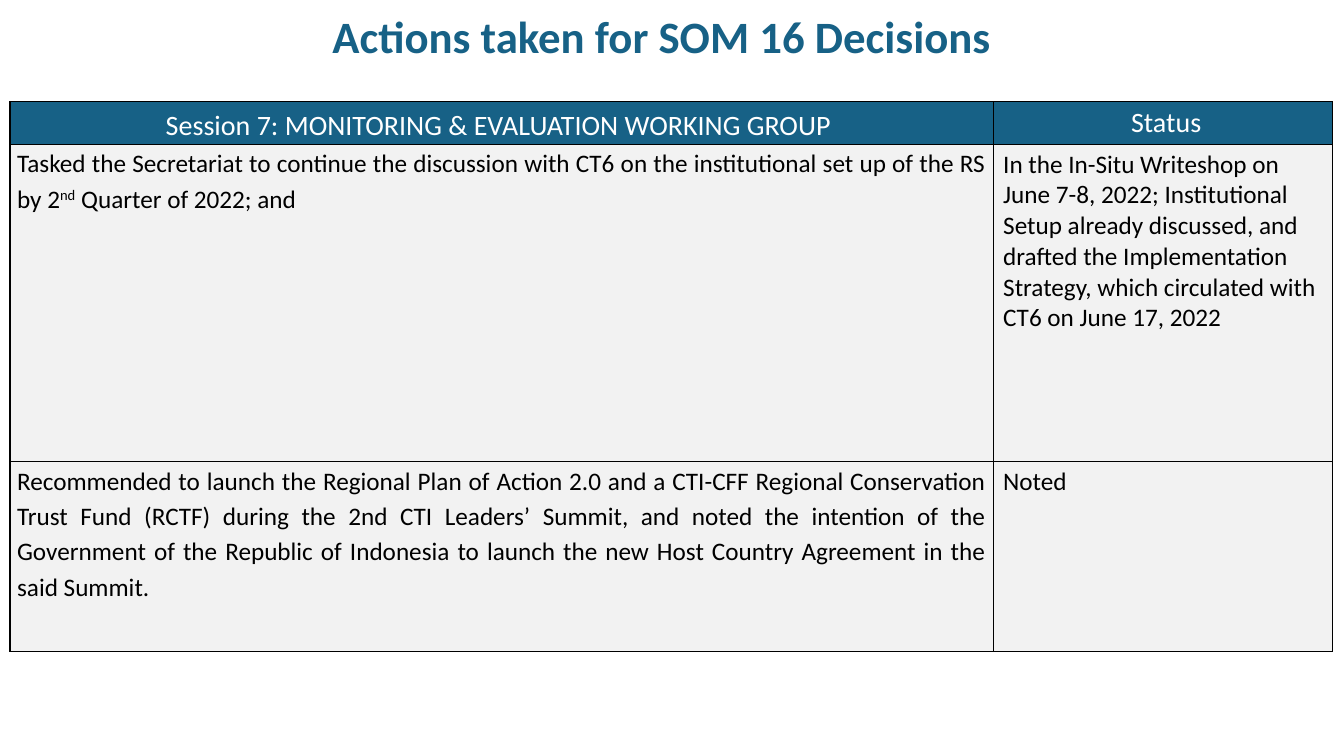
from lxml import etree
from pptx import Presentation
from pptx.dml.color import RGBColor
from pptx.enum import text
from pptx.oxml import ns
from pptx.util import Inches, Pt

COLORS = {"blue": "176186", "white": "FFFFFF", "gray": "F2F2F2", "black": "000000"}


def add_run(paragraph, words, size, color, bold=False):
    run = paragraph.add_run()
    run.text = words
    run.font.name = "Calibri"
    run.font.size = Pt(size)
    run.font.bold = bold
    run.font.color.rgb = RGBColor.from_string(COLORS[color])
    return run


def add_borders(cell):
    properties = cell._tc.get_or_add_tcPr()
    for side in ("lnL", "lnR", "lnT", "lnB"):
        line = etree.SubElement(properties, ns.qn(f"a:{side}"), w=str(Pt(1)))
        fill = etree.SubElement(line, ns.qn("a:solidFill"))
        etree.SubElement(fill, ns.qn("a:srgbClr"), val=COLORS["black"])


presentation = Presentation()
presentation.slide_width = Inches(13.33)
presentation.slide_height = Inches(7.5)
slide = presentation.slides.add_slide(presentation.slide_layouts[5])

title = slide.shapes.title
title.left, title.top = Inches(0.44), Inches(0.03)
title.width, title.height = Inches(12.45), Inches(0.64)
title.text_frame.vertical_anchor = text.MSO_ANCHOR.MIDDLE
heading = title.text_frame.paragraphs[0]
heading.alignment = text.PP_ALIGN.CENTER
add_run(heading, "Actions taken for SOM 16 Decisions  ", 32, "blue", True)

column_widths = [9.75, 3.37]
row_heights = [0.42, 3.15, 1.88]
rows = [
    [["Session 7: MONITORING & EVALUATION WORKING GROUP "], ["\u00a0Status"]],
    [
        ["Tasked the Secretariat to continue the discussion with CT6 on the "
         "institutional set up of the RS by 2", "nd", " Quarter of 2022; and"],
        ["In the In-Situ Writeshop on June 7-8, 2022; Institutional Setup already "
         "discussed, and drafted the Implementation Strategy, which circulated "
         "with CT6 on June 17, 2022"],
    ],
    [
        ["Recommended to launch the Regional Plan of Action 2.0 and a CTI-CFF "
         "Regional Conservation Trust Fund (RCTF) during the 2nd CTI Leaders’ "
         "Summit, and noted the intention of the Government of the Republic of "
         "Indonesia to launch the new Host Country Agreement in the said Summit. "],
        ["Noted"],
    ],
]

table = slide.shapes.add_table(
    len(rows), len(column_widths), Inches(0.1), Inches(1.01),
    Inches(sum(column_widths)), Inches(sum(row_heights)),
).table
for column, width in zip(table.columns, column_widths):
    column.width = Inches(width)
for row, height in zip(table.rows, row_heights):
    row.height = Inches(height)

for row_index, row in enumerate(rows):
    for column_index, pieces in enumerate(row):
        is_header = row_index == 0
        is_decision = column_index == 0
        cell = table.cell(row_index, column_index)
        add_borders(cell)
        cell.fill.solid()
        cell.fill.fore_color.rgb = RGBColor.from_string(COLORS["blue" if is_header else "gray"])
        cell.vertical_anchor = text.MSO_ANCHOR.MIDDLE if is_header else text.MSO_ANCHOR.TOP
        side_margin = 0.2 if is_header else 0.07 if is_decision else 0.1
        cell.margin_left = cell.margin_right = Inches(side_margin)
        cell.margin_top = cell.margin_bottom = Inches(0 if is_header or is_decision else 0.05)

        paragraph = cell.text_frame.paragraphs[0]
        if is_header:
            paragraph.alignment = text.PP_ALIGN.CENTER
        elif is_decision:
            paragraph.alignment = text.PP_ALIGN.JUSTIFY
        if is_decision:
            paragraph.line_spacing = 1.15
        for piece in pieces:
            run = add_run(paragraph, piece, 20 if is_header else 18,
                          "white" if is_header else "black")
            if piece == "nd":
                run._r.get_or_add_rPr().set("baseline", "30000")

presentation.save("out.pptx")
